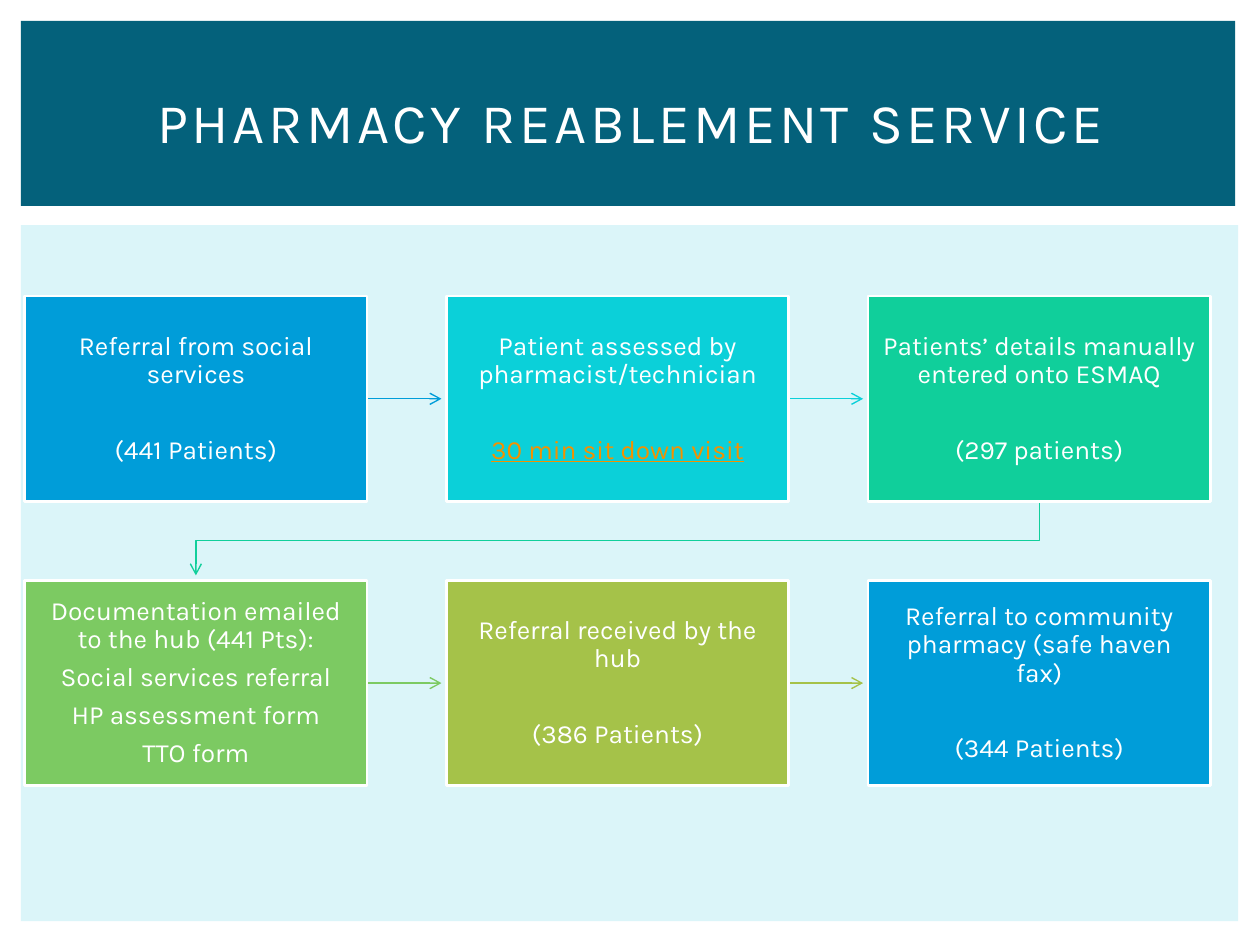
from lxml import etree
from pptx import Presentation
from pptx.dml.color import RGBColor
from pptx.enum.shapes import MSO_CONNECTOR, MSO_SHAPE
from pptx.enum.text import MSO_ANCHOR, PP_ALIGN
from pptx.oxml.ns import qn
from pptx.util import Cm, Pt

RECTANGLE = MSO_SHAPE.RECTANGLE
STRAIGHT = MSO_CONNECTOR.STRAIGHT
MIDDLE = MSO_ANCHOR.MIDDLE
CENTER = PP_ALIGN.CENTER

FONT = "Karla"
WHITE = "FFFFFF"
HIGHLIGHT = "F49100"
TITLE = "PHARMACY REABLEMENT SERVICE"
PANELS = [
    ("DBF5F9", 0.42, 4.54, 24.54, 14.03),
    ("04617B", 0.42, 0.42, 24.48, 3.73),
]
LIST_GAP, COUNT_GAP = 5.5, 27
STEPS = [
    ("009DD9", COUNT_GAP, ["Referral from social services", "(441 Patients)"]),
    ("0BD0D9", COUNT_GAP, ["Patient assessed by pharmacist/technician", "30 min sit down visit"]),
    ("10CF9B", COUNT_GAP, ["Patients’ details manually entered onto ESMAQ", "(297 patients)"]),
    ("7CCA62", LIST_GAP, ["Documentation emailed to the hub (441 Pts):", "Social services referral",
                          "HP assessment form", "TTO form"]),
    ("A5C249", COUNT_GAP, ["Referral received by the hub", "(386 Patients)"]),
    ("009DD9", COUNT_GAP, ["Referral to community pharmacy (safe haven fax)", "(344 Patients)"]),
]
UNDERLINED = "30 min sit down visit"

COLUMNS = 3
LEFT, TOP = 0.5, 5.97
STEP_W, STEP_H = 6.9, 4.14
PITCH_X, PITCH_Y = 8.5, 5.73
ARROW_GAP = 0.1
TURN_DROP = 0.79


def color(value):
    return RGBColor.from_string(value)


def add_box(slide, fill, left, top, width, height):
    box = slide.shapes.add_shape(RECTANGLE, Cm(left), Cm(top), Cm(width), Cm(height))
    box.shadow.inherit = False
    box.fill.solid()
    box.fill.fore_color.rgb = color(fill)
    box.line.fill.background()
    return box


def write(paragraph, text, size, text_color=WHITE):
    paragraph.text = text
    paragraph.alignment = CENTER
    paragraph.font.name = FONT
    paragraph.font.size = Pt(size)
    paragraph.font.color.rgb = color(text_color)


def add_step(slide, fill, gap, lines, left, top):
    step = add_box(slide, fill, left, top, STEP_W, STEP_H)
    step.line.color.rgb = color(WHITE)
    step.line.width = Pt(1.5)
    frame = step.text_frame
    frame.word_wrap = True
    frame.vertical_anchor = MIDDLE
    frame.margin_left = frame.margin_right = frame.margin_top = frame.margin_bottom = Cm(0.3)
    for i, line in enumerate(lines):
        paragraph = frame.add_paragraph() if i else frame.paragraphs[0]
        write(paragraph, line, 15, HIGHLIGHT if line == UNDERLINED else WHITE)
        paragraph.font.underline = True if line == UNDERLINED else None
        paragraph.line_spacing = 0.9
        paragraph.space_before = Pt(gap if i else 0)


def style_arrow(arrow, line_color):
    arrow.line.color.rgb = color(line_color)
    arrow.line.width = Pt(0.79)
    properties = arrow._element.spPr
    etree.SubElement(properties.find(qn("a:ln")), qn("a:tailEnd"), type="arrow")
    etree.SubElement(properties, qn("a:effectLst"))


def add_arrow(slide, line_color, left, top):
    start, end = left + STEP_W, left + PITCH_X - ARROW_GAP
    middle = Cm(top + STEP_H / 2)
    arrow = slide.shapes.add_connector(STRAIGHT, Cm(start), middle, Cm(end), middle)
    style_arrow(arrow, line_color)


def add_turn(slide, line_color, left, top):
    start_x, end_x = left + STEP_W / 2, LEFT + STEP_W / 2
    start_y, end_y = top + STEP_H, top + PITCH_Y - ARROW_GAP
    turn_y = start_y + TURN_DROP
    builder = slide.shapes.build_freeform(Cm(start_x), Cm(start_y))
    corners = [(start_x, turn_y), (end_x, turn_y), (end_x, end_y)]
    builder.add_line_segments([(Cm(x), Cm(y)) for x, y in corners], close=False)
    turn = builder.convert_to_shape()
    turn.fill.background()
    style_arrow(turn, line_color)


def main():
    deck = Presentation()
    deck.slide_width, deck.slide_height = Cm(25.4), Cm(19.05)
    slide = deck.slides.add_slide(deck.slide_layouts[6])

    for panel in PANELS:
        add_box(slide, *panel)

    for i, (fill, gap, lines) in enumerate(STEPS):
        row, column = divmod(i, COLUMNS)
        left, top = LEFT + column * PITCH_X, TOP + row * PITCH_Y
        if column < COLUMNS - 1:
            add_arrow(slide, fill, left, top)
        elif i < len(STEPS) - 1:
            add_turn(slide, fill, left, top)
        add_step(slide, fill, gap, lines, left, top)

    title = slide.shapes.add_textbox(Cm(1.07), Cm(0.99), Cm(23.29), Cm(2.92))
    title.text_frame.word_wrap = True
    title.text_frame.vertical_anchor = MIDDLE
    heading = title.text_frame.paragraphs[0]
    write(heading, TITLE, 32)
    heading.runs[0]._r.get_or_add_rPr().set("spc", "200")

    deck.save("out.pptx")


if __name__ == "__main__":
    main()
